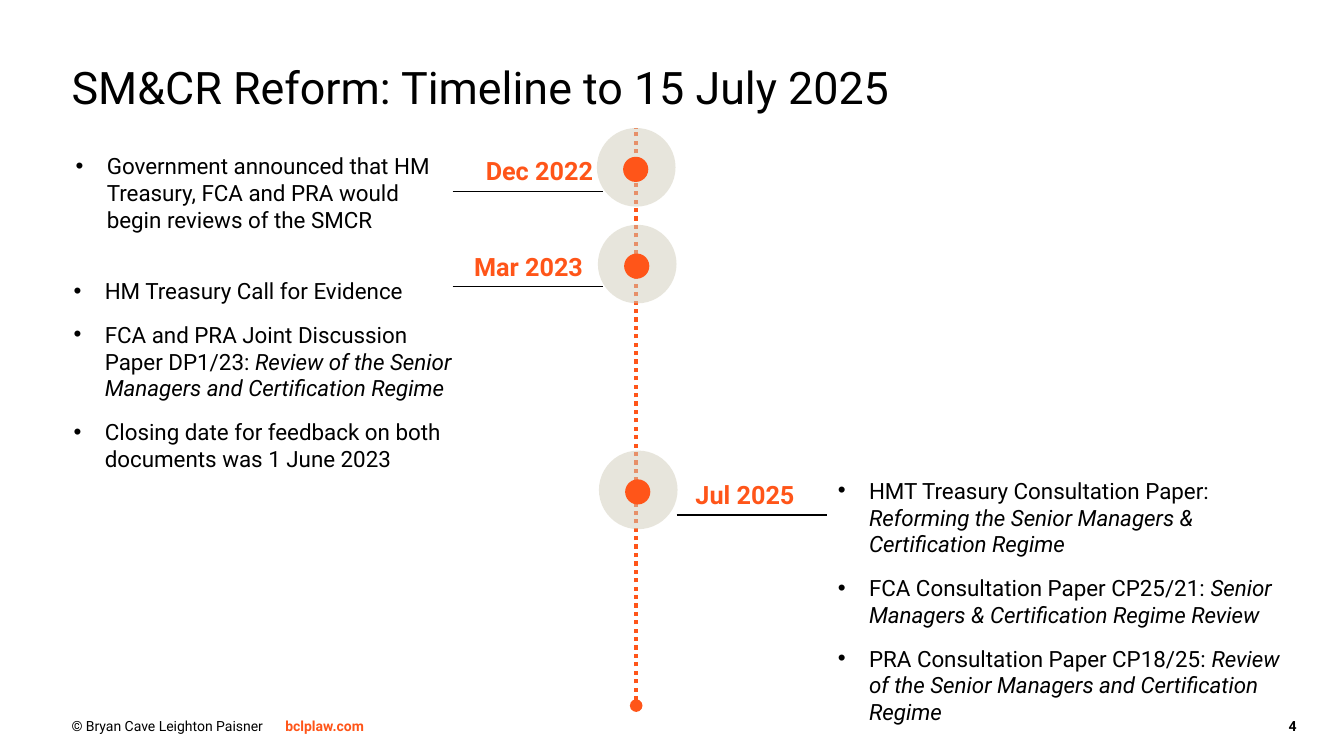
from lxml import etree
from pptx import Presentation
from pptx.dml.color import RGBColor
from pptx.enum.dml import MSO_LINE
from pptx.enum.shapes import MSO_CONNECTOR, MSO_SHAPE
from pptx.enum.text import MSO_ANCHOR, PP_ALIGN
from pptx.oxml.ns import qn
from pptx.util import Inches, Pt

BLACK = RGBColor(0x00, 0x00, 0x00)
ORANGE = RGBColor(0xFF, 0x55, 0x19)
STONE = RGBColor(0xD1, 0xCC, 0xBA)
FONT = "Roboto"
LEFT, RIGHT = PP_ALIGN.LEFT, PP_ALIGN.RIGHT
TOP = MSO_ANCHOR.TOP
OVAL = MSO_SHAPE.OVAL
STRAIGHT = MSO_CONNECTOR.STRAIGHT
DOTTED = MSO_LINE.ROUND_DOT

HALO, DOT = 0.78, 0.25
LABEL_H, RULE_W = 0.4, 1.49

DEC_2022 = [
    ("Government announced that HM Treasury, FCA and PRA would begin reviews of the SMCR", ""),
]
MAR_2023 = [
    ("HM Treasury Call for Evidence", ""),
    ("FCA and PRA Joint Discussion Paper DP1/23: ",
     "Review of the Senior Managers and Certification Regime"),
    ("Closing date for feedback on both documents was 1 June 2023", ""),
]
JUL_2025 = [
    ("HMT Treasury Consultation Paper: ",
     "Reforming the Senior Managers & Certification Regime"),
    ("FCA Consultation Paper CP25/21: ",
     "Senior Managers & Certification Regime Review"),
    ("PRA Consultation Paper CP18/25: ",
     "Review of the Senior Managers and Certification Regime"),
]


def add_frame(s, x, y, w, h, inset_x=0, inset_y=0):
    tf = s.shapes.add_textbox(Inches(x), Inches(y), Inches(w), Inches(h)).text_frame
    tf.word_wrap = True
    tf.vertical_anchor = TOP
    tf.margin_left = tf.margin_right = Inches(inset_x)
    tf.margin_top = tf.margin_bottom = Inches(inset_y)
    return tf


def add_run(p, text, size=16, color=BLACK, bold=False, italic=False):
    r = p.add_run()
    r.text = text
    r.font.name = FONT
    r.font.size = Pt(size)
    r.font.color.rgb = color
    r.font.bold = bold
    r.font.italic = italic


def add_text(s, text, x, y, w, h, align=LEFT, inset_x=0, inset_y=0, **style):
    p = add_frame(s, x, y, w, h, inset_x, inset_y).paragraphs[0]
    p.alignment = align
    add_run(p, text, **style)


def add_bullets(s, items, x, y, w, h):
    tf = add_frame(s, x, y, w, h, 0.13, 0.13)
    for i, (plain, title) in enumerate(items):
        p = tf.add_paragraph() if i else tf.paragraphs[0]
        pPr = p._p.get_or_add_pPr()
        pPr.set("marL", str(Inches(0.31)))
        pPr.set("indent", str(-Inches(0.31)))
        etree.SubElement(pPr, qn("a:buFont"), typeface="Arial")
        etree.SubElement(pPr, qn("a:buChar"), char="•")
        p.space_after = Pt(12 if i < len(items) - 1 else 0)
        add_run(p, plain)
        if title:
            add_run(p, title, italic=True)


def add_line(s, x1, y1, x2, y2, color=BLACK, width=1):
    line = s.shapes.add_connector(STRAIGHT, Inches(x1), Inches(y1), Inches(x2), Inches(y2))
    line.line.color.rgb = color
    line.line.width = Pt(width)
    etree.SubElement(line._element.spPr, qn("a:effectLst"))
    return line


def add_circle(group, x, y, size, color):
    circle = group.shapes.add_shape(OVAL, Inches(x), Inches(y), Inches(size), Inches(size))
    circle.shadow.inherit = False
    circle.fill.solid()
    circle.fill.fore_color.rgb = color
    circle.line.fill.background()
    return circle


def add_spine(s, x, top, bottom):
    spine = add_line(s, x, bottom, x, top, ORANGE, 3)
    spine.line.dash_style = DOTTED
    etree.SubElement(spine.line._get_or_add_ln(), qn("a:headEnd"), type="oval")


def add_marker(s, x, y):
    group = s.shapes.add_group_shape()
    halo = add_circle(group, x, y, HALO, STONE)
    etree.SubElement(halo.fill._xPr.find(".//" + qn("a:srgbClr")), qn("a:alpha"), val="50000")
    add_circle(group, x + 0.26, y + 0.285, DOT, ORANGE)


def add_milestone(s, date, marker, label, rule, align):
    add_marker(s, *marker)
    x, y, w = label
    add_text(s, date, x, y, w, LABEL_H, align=align, inset_x=0.1, inset_y=0.05,
             size=18, color=ORANGE, bold=True)
    rule_x, rule_y = rule
    add_line(s, rule_x, rule_y, rule_x + RULE_W, rule_y)


def add_timeline(s):
    add_spine(s, 6.31, 1.27, 7)
    add_milestone(s, "Dec 2022", (5.92, 1.27), (3.54, 1.49, 2.44), (4.49, 1.9), RIGHT)
    add_milestone(s, "Mar 2023", (5.93, 2.23), (4.09, 2.44, 1.79), (4.49, 2.84), RIGHT)
    add_milestone(s, "Jul 2025", (5.94, 4.47), (6.8, 4.71, 1.53), (6.71, 5.11), LEFT)
    add_bullets(s, DEC_2022, 0.62, 1.38, 3.8, 1.28)
    add_bullets(s, MAR_2023, 0.6, 2.62, 4.01, 2.75)
    add_bullets(s, JUL_2025, 8.18, 4.6, 4.84, 2.75)


def add_footer(s, y, h):
    add_text(s, "© Bryan Cave Leighton Paisner", 0.71, y, 2.13, h, size=10)
    add_text(s, "bclplaw.com", 2.83, y, 2.13, h, size=10, color=ORANGE, bold=True)
    add_text(s, "4", 12.27, y, 0.59, h, align=RIGHT, size=10, bold=True)


def main():
    prs = Presentation()
    prs.slide_width, prs.slide_height = Inches(13.33), Inches(7.5)
    s = prs.slides.add_slide(prs.slide_layouts[6])
    add_text(s, "SM&CR Reform: Timeline to 15 July 2025", 0.71, 0.59, 12.15, 0.98, size=32)
    add_timeline(s)
    add_footer(s, 7.12, 0.38)
    prs.save("out.pptx")


if __name__ == "__main__":
    main()
